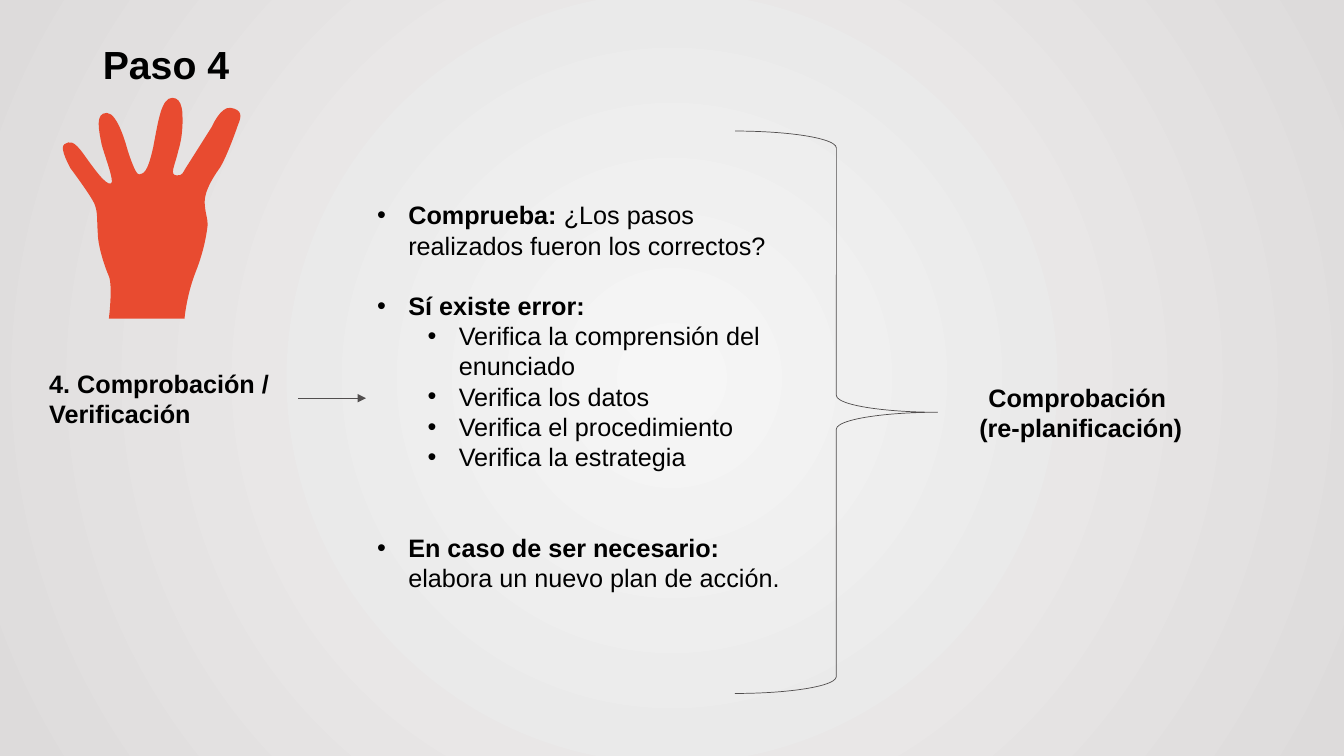
"""Build the slide for step 4: checking and re-planning."""
from pptx import Presentation
from pptx import util as u
from pptx.dml.color import RGBColor
from pptx.enum import shapes, text
from pptx.oxml import parse_xml
from pptx.oxml.ns import nsdecls, qn

COLORS = {
    "text": "000000",
    "line": "514E4E",
    "hand": "E84B30",
    "center": "F6F6F6",
    "edge": "DDDBDB",
}
LINE_GAP = 21.6
BULLETS = [
    (0, 0, "Comprueba: ", "¿Los pasos realizados fueron los correctos?"),
    (0, 1, "Sí existe error:", ""),
    (1, 0, "", "Verifica la comprensión del enunciado"),
    (1, 0, "", "Verifica los datos"),
    (1, 0, "", "Verifica el procedimiento"),
    (1, 0, "", "Verifica la estrategia"),
    (0, 2, "En caso de ser necesario: ", "elabora un nuevo plan de acción."),
]
HAND_START = (1.08, 3.16)
HAND_CURVES = [
    (1.08, 3.16, 1.12, 2.84, 1.08, 2.74), (1.04, 2.65, 0.97, 2.44, 0.97, 2.31),
    (0.96, 2.17, 0.97, 2.11, 0.94, 2.03), (0.91, 1.95, 0.7, 1.67, 0.7, 1.67),
    (0.7, 1.67, 0.58, 1.46, 0.64, 1.43), (0.69, 1.4, 0.73, 1.39, 0.83, 1.53),
    (0.93, 1.67, 1.05, 1.84, 1.1, 1.82), (1.14, 1.81, 1.05, 1.58, 1.01, 1.44),
    (0.98, 1.29, 0.94, 1.12, 1.06, 1.12), (1.17, 1.12, 1.26, 1.47, 1.26, 1.47),
    (1.26, 1.47, 1.34, 1.74, 1.38, 1.73), (1.42, 1.72, 1.46, 1.73, 1.52, 1.46),
    (1.57, 1.2, 1.6, 0.97, 1.71, 0.97), (1.82, 0.97, 1.81, 1.16, 1.81, 1.16),
    (1.81, 1.16, 1.82, 1.33, 1.77, 1.49), (1.73, 1.66, 1.68, 1.73, 1.75, 1.74),
    (1.81, 1.75, 1.82, 1.7, 1.84, 1.67), (1.86, 1.64, 2.1, 1.26, 2.1, 1.26),
    (2.1, 1.26, 2.19, 1.05, 2.29, 1.07), (2.4, 1.09, 2.4, 1.15, 2.36, 1.24),
    (2.33, 1.33, 2.23, 1.6, 2.17, 1.68), (2.12, 1.75, 2.03, 1.89, 2.03, 2),
    (2.03, 2.1, 2.06, 2.16, 2.06, 2.23), (2.05, 2.31, 2.03, 2.47, 1.94, 2.7),
    (1.85, 2.93, 1.83, 3.16, 1.83, 3.16),
]


def color(name):
    return RGBColor.from_string(COLORS[name])


def place(shape, left, top, width, height):
    shape.left, shape.top = u.Inches(left), u.Inches(top)
    shape.width, shape.height = u.Inches(width), u.Inches(height)


def add_text(paragraph, words, size=18, bold=True, align=text.PP_ALIGN.LEFT):
    paragraph.alignment = align
    run = paragraph.add_run()
    run.text = words
    run.font.name = "Arial"
    run.font.size = u.Pt(size)
    run.font.bold = bold
    run.font.color.rgb = color("text")


def set_background(slide):
    fill = slide.background.fill
    fill.gradient()
    for stop, name in zip(fill.gradient_stops, ("center", "edge")):
        stop.color.rgb = color(name)
    gradient = next(slide._element.iter(qn("a:gradFill")))
    gradient.replace(gradient.find(qn("a:lin")), parse_xml(
        f'<a:path {nsdecls("a")} path="circle">'
        '<a:fillToRect l="50000" t="50000" r="50000" b="50000"/></a:path>'))


def prepare_frame(placeholder):
    frame = placeholder.text_frame
    frame.auto_size = text.MSO_AUTO_SIZE.NONE
    frame.vertical_anchor = text.MSO_ANCHOR.TOP
    return frame


def set_title(slide, words):
    title = slide.shapes.title
    place(title, 0.92, 0.4, 8.91, 0.57)
    paragraph = prepare_frame(title).paragraphs[0]
    paragraph.line_spacing = 0.9
    add_text(paragraph, words, size=28)


def set_bullets(body):
    place(body, 3.14, 1.63, 4.95, 4.64)
    frame = prepare_frame(body)
    frame.margin_top = u.Inches(0.35)
    frame.margin_right = u.Inches(0.15)
    for index, (level, gap_lines, lead, words) in enumerate(BULLETS):
        paragraph = frame.add_paragraph() if index else frame.paragraphs[0]
        paragraph.level = level
        paragraph.space_before = u.Pt(LINE_GAP * gap_lines)
        for part, bold in ((lead, True), (words, False)):
            if part:
                add_text(paragraph, part, bold=bold)
        properties = paragraph._p.get_or_add_pPr()
        properties.set("marL", str(u.Inches(0.81 + 0.5 * level)))
        properties.set("indent", str(u.Inches(-0.31)))
        properties.append(parse_xml(f'<a:buChar {nsdecls("a")} char="•"/>'))


def add_label(slide, box, lines, align=text.PP_ALIGN.LEFT):
    label = slide.shapes.add_textbox(*map(u.Inches, box))
    frame = label.text_frame
    frame.word_wrap = True
    for index, line in enumerate(lines):
        paragraph = frame.add_paragraph() if index else frame.paragraphs[0]
        add_text(paragraph, line, align=align)
    return label


def set_line(shape):
    shape.line.color.rgb = color("line")
    shape.line.width = u.Pt(0.5)


def add_arrow(slide, label, end_x, y):
    arrow = slide.shapes.add_connector(
        shapes.MSO_CONNECTOR.STRAIGHT, label.left + label.width, u.Inches(y),
        u.Inches(end_x), u.Inches(y))
    arrow.begin_connect(label, 3)
    set_line(arrow)
    arrow.line._get_or_add_ln().append(
        parse_xml(f'<a:tailEnd {nsdecls("a")} type="triangle"/>'))
    arrow._element.spPr.append(parse_xml(f'<a:effectLst {nsdecls("a")}/>'))


def add_brace(slide, box):
    brace = slide.shapes.add_shape(
        shapes.MSO_SHAPE.RIGHT_BRACE, *map(u.Inches, box))
    brace.shadow.inherit = False
    brace.fill.background()
    set_line(brace)


def bend_segments(shape):
    """Turn each three straight segments into one cubic curve."""
    segments = list(shape._element.iter(qn("a:lnTo")))
    for first, second, third in zip(*[iter(segments)] * 3):
        curve = parse_xml(f'<a:cubicBezTo {nsdecls("a")}/>')
        first.addprevious(curve)
        for segment in (first, second, third):
            curve.append(segment.find(qn("a:pt")))
            segment.getparent().remove(segment)


def add_hand(slide):
    points = [(u.Inches(curve[i]), u.Inches(curve[i + 1]))
              for curve in HAND_CURVES for i in (0, 2, 4)]
    builder = slide.shapes.build_freeform(*map(u.Inches, HAND_START))
    builder.add_line_segments(points, close=True)
    hand = builder.convert_to_shape()
    bend_segments(hand)
    hand.shadow.inherit = False
    hand.fill.solid()
    hand.fill.fore_color.rgb = color("hand")
    hand.line.fill.background()


def main():
    presentation = Presentation()
    presentation.slide_width = u.Inches(13.33)
    presentation.slide_height = u.Inches(7.5)
    slide = presentation.slides.add_slide(presentation.slide_layouts[1])
    set_background(slide)
    set_title(slide, "Paso 4")
    step = add_label(slide, (0.39, 3.6, 2.57, 0.7),
                     ["4. Comprobación / Verificación"])
    add_arrow(slide, step, 3.63, 3.95)
    set_bullets(slide.placeholders[1])
    add_brace(slide, (7.29, 1.3, 2.01, 5.58))
    add_label(slide, (9.47, 3.74, 2.5, 0.71),
              ["Comprobación ", "(re-planificación)"], text.PP_ALIGN.CENTER)
    add_hand(slide)
    presentation.save("out.pptx")


if __name__ == "__main__":
    main()
